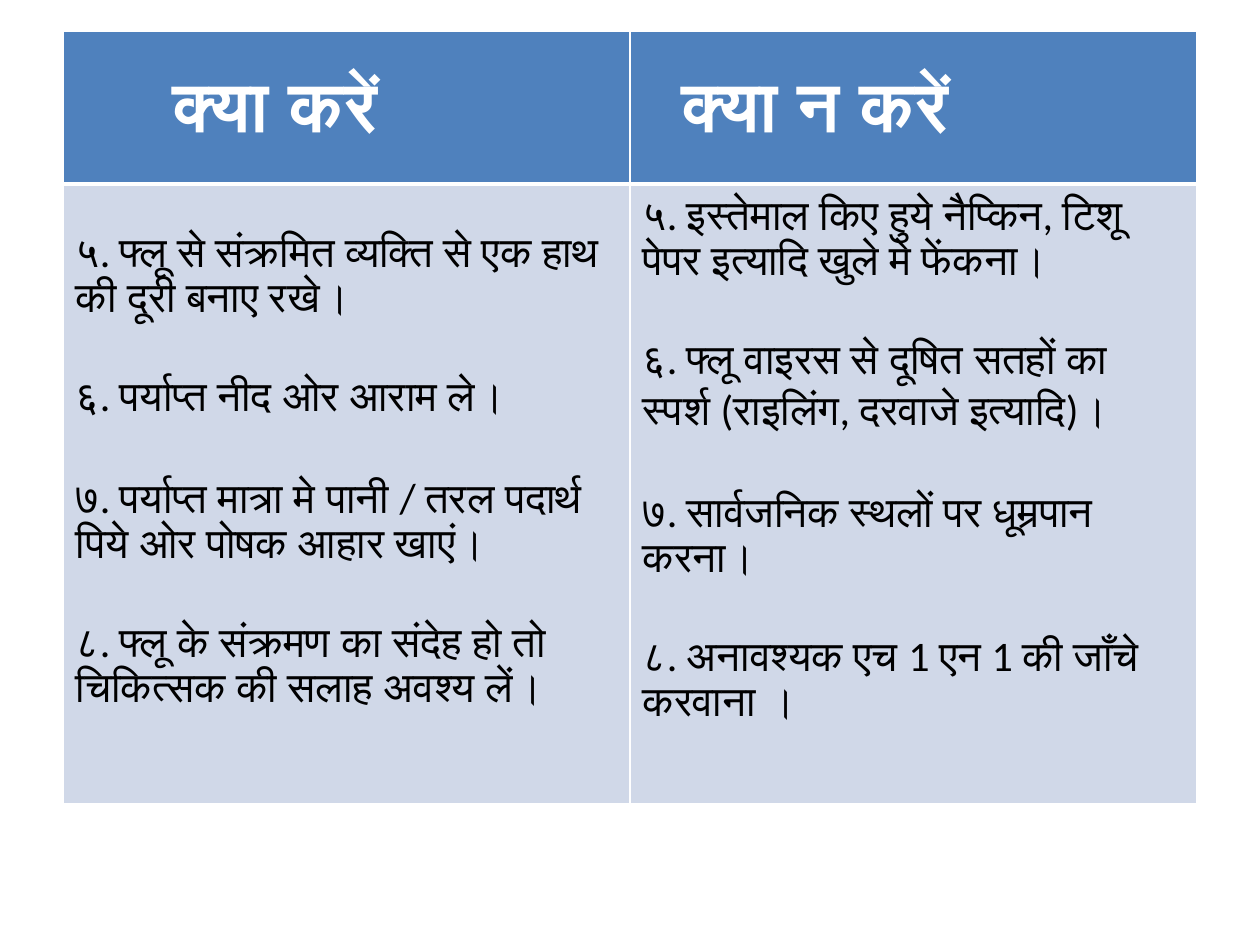
from lxml.etree import SubElement
from pptx import Presentation
from pptx.dml.color import RGBColor as RGB
from pptx.oxml.ns import qn
from pptx.util import Inches, Pt

# Content: heading, heading indent, top margin of the list, list
COLS = [
    ("क्या करें", 0.77, 0.35, [
        "५. फ्लू से संक्रमित व्यक्ति से एक हाथ की दूरी बनाए रखे।",
        "६. पर्याप्त नीद ओर आराम ले।",
        "७. पर्याप्त मात्रा मे पानी / तरल पदार्थ पिये ओर पोषक आहार खाएं।",
        "८. फ्लू के संक्रमण का संदेह हो तो चिकित्सक की सलाह अवश्य लें।",
    ]),
    ("क्या न करें", 0.31, 0.05, [
        "५. इस्तेमाल किए हुये नैप्किन, टिशू पेपर इत्यादि खुले मे फेंकना।",
        "६. फ्लू वाइरस से दूषित सतहों का स्पर्श (राइलिंग, दरवाजे इत्यादि)।",
        "७. सार्वजनिक स्थलों पर धूम्रपान करना।",
        "८. अनावश्यक एच 1 एन 1 की जाँचे करवाना ।",
    ]),
]
ROWS = (1.21, 4.92)
WIDTH = 4.5
PAD = 0.1
GAP = Pt(29)

WHITE = RGB(0xFF, 0xFF, 0xFF)
BLACK = RGB(0, 0, 0)
BLUE = RGB(0x4F, 0x81, 0xBD)
PALE = RGB(0xD0, 0xD8, 0xE8)


def edge(cell, top, bottom):
    """Draw white borders, one point wide at the sides."""
    props = cell._tc.get_or_add_tcPr()
    sides = (("L", 1), ("R", 1), ("T", top), ("B", bottom))
    for spot, (side, width) in enumerate(sides):
        line = SubElement(props, qn(f"a:ln{side}"), w=str(Pt(width)))
        fill = SubElement(line, qn("a:solidFill"))
        SubElement(fill, qn("a:srgbClr"), val=str(WHITE))
        props.insert(spot, line)


def write(cell, lines, size, color, bold, back, left, top):
    cell.fill.solid()
    cell.fill.fore_color.rgb = back
    cell.margin_left = Inches(left)
    cell.margin_top = Inches(top)
    frame = cell.text_frame
    frame.text = "\n".join(lines)
    for spot, para in enumerate(frame.paragraphs):
        if spot:
            para.space_before = GAP
        font = para.runs[0].font
        font.name, font.size, font.bold = "Calibri", Pt(size), bold
        font.color.rgb = color


# Slide
prs = Presentation()
prs.slide_width, prs.slide_height = Inches(10), Inches(7.5)
slide = prs.slides.add_slide(prs.slide_layouts[6])

# Table grid
table = slide.shapes.add_table(
    len(ROWS), len(COLS), Inches(0.5), Inches(0.25),
    Inches(WIDTH * len(COLS)), Inches(sum(ROWS))).table
for row, height in zip(table.rows, ROWS):
    row.height = Inches(height)

# Headings and lists
for col, (head, indent, top, items) in enumerate(COLS):
    table.columns[col].width = Inches(WIDTH)
    title, body = table.cell(0, col), table.cell(1, col)
    write(title, [head], 40, WHITE, True, BLUE, PAD + indent, 0.35)
    write(body, items, 24, BLACK, False, PALE, PAD, top)
    edge(title, 1, 3)
    edge(body, 3, 1)

prs.save("out.pptx")
